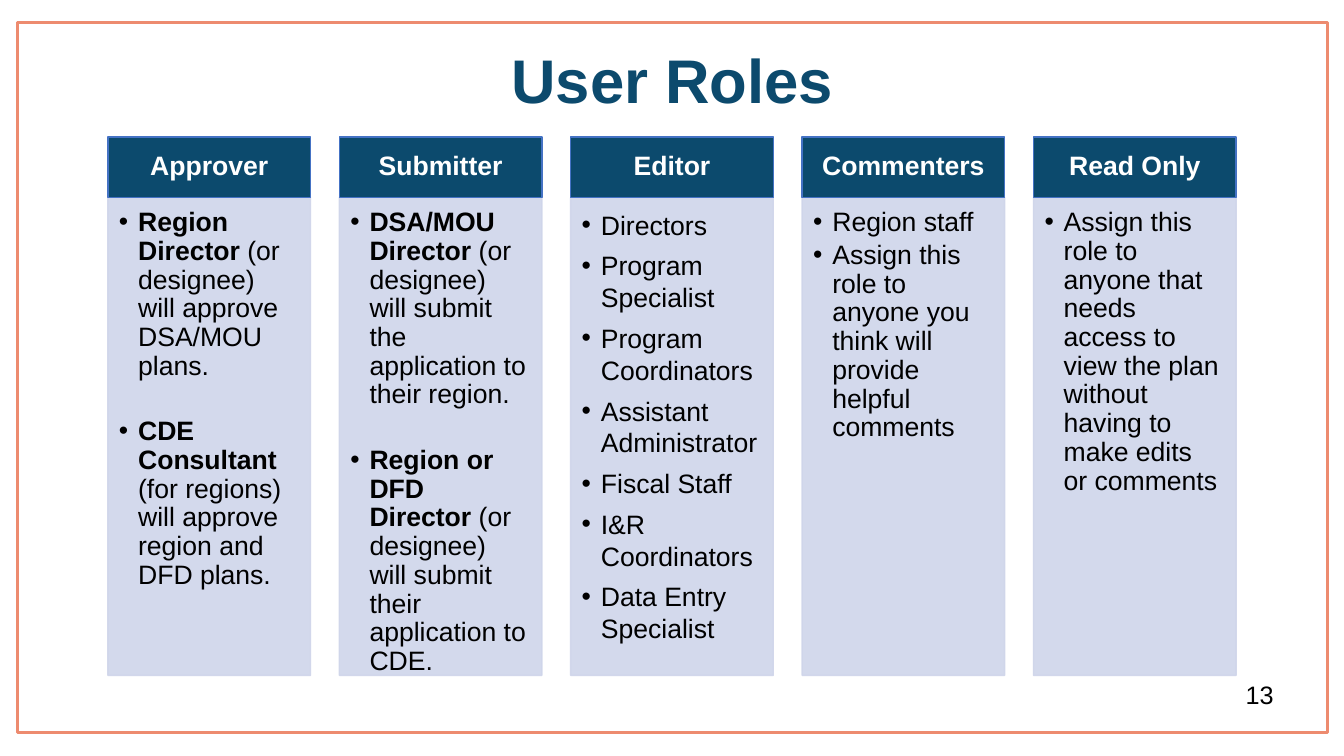
"""Build the User Roles slide: five role columns with headers and bulleted lists."""
from copy import deepcopy
from dataclasses import dataclass

from lxml import etree
from pptx import Presentation
from pptx import util as u
from pptx.dml.color import RGBColor
from pptx.enum import shapes, text
from pptx.oxml import ns

COLORS = {"navy": "0C4A6D", "coral": "ED8B6F", "blue": "4472C4",
          "panel": "CFD5EA", "black": "000000", "white": "FFFFFF"}
SLIDE_W, SLIDE_H = 13.33, 7.5
GRID_LEFT, GRID_W, COL_W = 1.07, 11.19, 2.01
HEAD_TOP, HEAD_H, PANEL_H = 1.36, 0.6, 4.74
BODY_SIZE = 19
BULLET_INDENT = 0.19


@dataclass
class Item:
    """One bullet, with an optional bold opening."""
    text: str
    lead: str = ""


@dataclass
class Role:
    """One column: heading, bullets and their spacing in points."""
    name: str
    items: list[Item]
    line: float = 0.9
    before: float = 0


ROLES = [
    Role("Approver", [
        Item("(or designee) will approve DSA/MOU plans.", "Region Director "),
        Item("(for regions) will approve region and DFD plans.", "CDE Consultant "),
    ], before=23.4),
    Role("Submitter", [
        Item("(or designee) will submit the application to their region.", "DSA/MOU Director "),
        Item("(or designee) will submit their application to CDE.", "Region or DFD Director "),
    ], before=23.4),
    Role("Editor", [Item(t) for t in (
        "Directors", "Program Specialist", "Program Coordinators", "Assistant Administrator",
        "Fiscal Staff", "I&R Coordinators", "Data Entry Specialist")], line=1.0, before=3.4),
    Role("Commenters", [
        Item("Region staff"),
        Item("Assign this role to anyone you think will provide helpful comments"),
    ]),
    Role("Read Only", [
        Item("Assign this role to anyone that needs access to view the plan "
             "without having to make edits or comments"),
    ]),
]


def rgb(name: str) -> RGBColor:
    """Look up a colour."""
    return RGBColor.from_string(COLORS[name])


def write(p, words: str, *, size: float = BODY_SIZE, color: str = "black",
          bold: bool = False) -> None:
    """Add one formatted run."""
    r = p.add_run()
    r.text = words
    r.font.name, r.font.size, r.font.bold = "Arial", u.Pt(size), bold
    r.font.color.rgb = rgb(color)


def place(s, left: float, top: float, width: float, height: float) -> None:
    """Set position and size in inches."""
    s.left, s.top, s.width, s.height = map(u.Inches, (left, top, width, height))


def paint(s, fill: str | None, line: str, width: float, alpha: int = 100) -> None:
    """Set fill, outline and opacity."""
    if fill:
        s.fill.solid()
        s.fill.fore_color.rgb = rgb(fill)
    else:
        s.fill.background()
    s.line.color.rgb = rgb(line)
    s.line.width = u.Pt(width)
    if alpha < 100:
        for clr in s._element.spPr.iter(ns.qn("a:srgbClr")):
            etree.SubElement(clr, ns.qn("a:alpha")).set("val", str(alpha * 1000))


def frame(s, anchor, insets: tuple[float, float, float, float]):
    """Prepare a text frame and return it."""
    tf = s.text_frame
    tf.word_wrap, tf.auto_size = True, text.MSO_AUTO_SIZE.NONE
    tf.vertical_anchor = anchor
    tf.margin_left, tf.margin_top, tf.margin_right, tf.margin_bottom = map(u.Inches, insets)
    return tf


def space(p, line: float, before: float = 0, after: float = 0) -> None:
    """Set paragraph spacing."""
    p.line_spacing = line
    p.space_before, p.space_after = u.Pt(before), u.Pt(after)


def add_bullet(p) -> None:
    """Give a paragraph a hanging round bullet."""
    pPr = p._p.get_or_add_pPr()
    indent = u.Inches(BULLET_INDENT)
    pPr.set("marL", str(indent))
    pPr.set("indent", str(-indent))
    etree.SubElement(pPr, ns.qn("a:buFont")).set("typeface", "Arial")
    etree.SubElement(pPr, ns.qn("a:buChar")).set("char", "•")


def widen_layout(layout, count: int) -> None:
    """Give the layout one body placeholder per column."""
    body = layout.placeholders[1]._element
    for i in range(1, count):
        extra = deepcopy(body)
        extra.xpath(".//p:cNvPr")[0].set("id", str(100 + i))
        extra.xpath(".//p:ph")[0].set("idx", str(20 + i))
        layout.shapes._spTree.append(extra)


def add_box(slide, left: float, top: float, width: float, height: float):
    """Add a rectangle without shadow."""
    s = slide.shapes.add_shape(shapes.MSO_SHAPE.RECTANGLE, 0, 0, 0, 0)
    place(s, left, top, width, height)
    s.shadow.inherit = False
    return s


def draw_header(slide, role: Role, left: float) -> None:
    """Draw a column heading."""
    s = add_box(slide, left, HEAD_TOP, COL_W, HEAD_H)
    paint(s, "navy", "blue", 1)
    p = frame(s, text.MSO_ANCHOR.MIDDLE, (0.15, 0.08, 0.15, 0.08)).paragraphs[0]
    p.alignment = text.PP_ALIGN.CENTER
    space(p, 0.9)
    write(p, role.name, color="white", bold=True)


def fill_panel(s, role: Role, left: float) -> None:
    """Format a body placeholder as a column panel with its bullets."""
    place(s, left, HEAD_TOP + HEAD_H, COL_W, PANEL_H)
    paint(s, "panel", "panel", 1, alpha=90)
    tf = frame(s, text.MSO_ANCHOR.TOP, (0.11, 0.11, 0.15, 0.17))
    for i, item in enumerate(role.items):
        p = tf.add_paragraph() if i else tf.paragraphs[0]
        p.alignment = text.PP_ALIGN.LEFT
        space(p, role.line, role.before if i else 0, 0.15 * BODY_SIZE)
        add_bullet(p)
        if item.lead:
            write(p, item.lead, bold=True)
        write(p, item.text)


def main() -> None:
    """Build and save the slide."""
    prs = Presentation()
    prs.slide_width, prs.slide_height = u.Inches(SLIDE_W), u.Inches(SLIDE_H)
    layout = prs.slide_layouts[1]
    widen_layout(layout, len(ROLES))
    slide = prs.slides.add_slide(layout)
    title, *panels = slide.placeholders

    paint(add_box(slide, 0.17, 0.22, 13, 7.05), None, "coral", 2)

    place(title, 0.17, 0.1, 13, 1.45)
    p = frame(title, text.MSO_ANCHOR.MIDDLE, (0.1, 0.05, 0.1, 0.05)).paragraphs[0]
    p.alignment = text.PP_ALIGN.CENTER
    space(p, 0.9)
    write(p, "User Roles", size=44, color="navy", bold=True)

    pitch = (GRID_W - COL_W) / (len(ROLES) - 1)
    for i, (role, panel) in enumerate(zip(ROLES, panels)):
        left = GRID_LEFT + i * pitch
        draw_header(slide, role, left)
        fill_panel(panel, role, left)

    number = slide.shapes.add_textbox(0, 0, 0, 0)
    place(number, 9.62, 6.69, 3.11, 0.4)
    p = frame(number, text.MSO_ANCHOR.TOP, (0.1, 0.05, 0.1, 0.05)).paragraphs[0]
    p.alignment = text.PP_ALIGN.RIGHT
    write(p, "13", size=18)

    prs.save("out.pptx")


if __name__ == "__main__":
    main()
